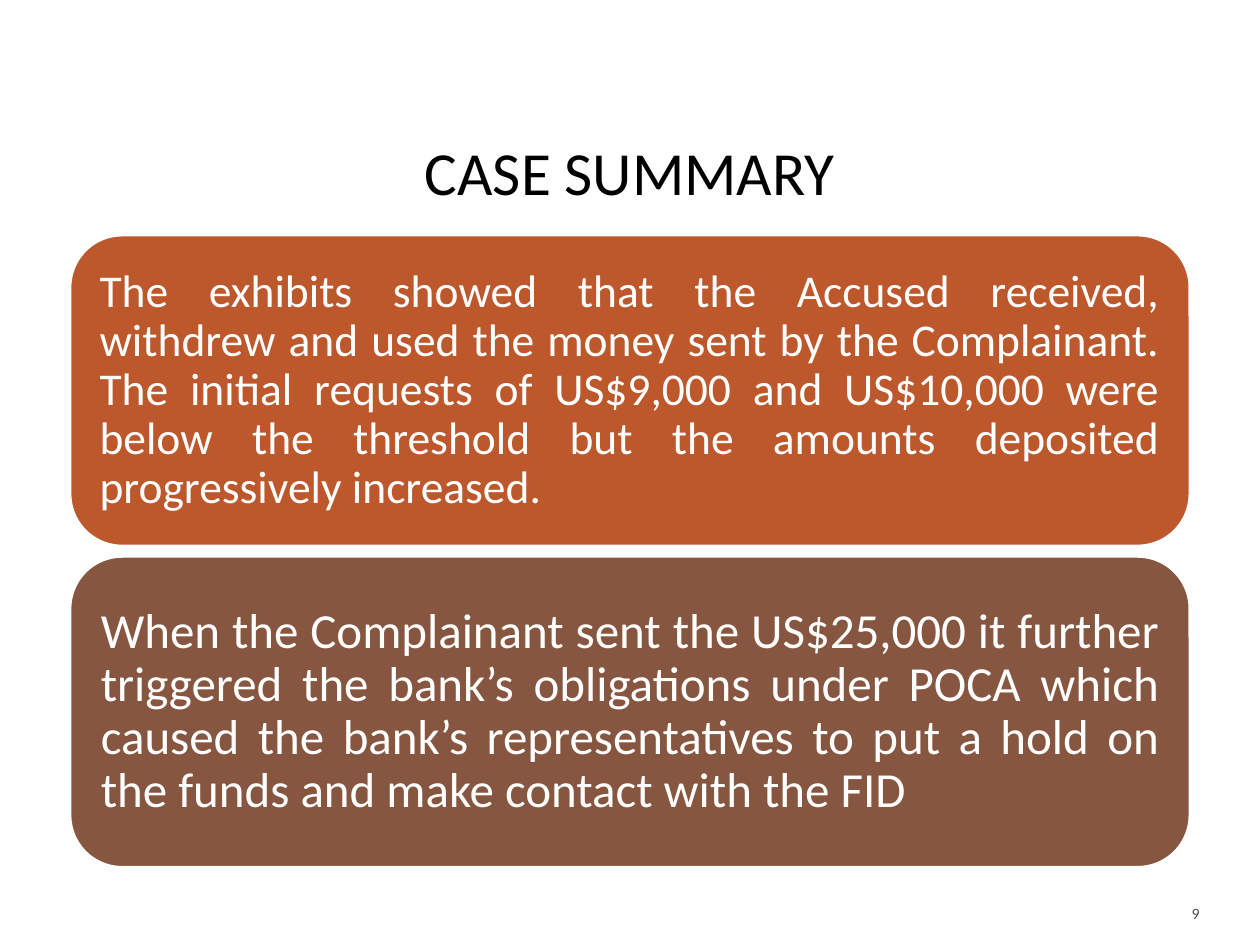
from pptx import Presentation
from pptx.dml import color
from pptx.enum import shapes, text
from pptx.util import Inches, Pt

ALIGN = text.PP_ALIGN
ANCHOR = text.MSO_ANCHOR
PANEL_LEFT, PANEL_TOP = 0.56, 1.87
PANEL_WIDTH, PANEL_HEIGHT, PANEL_STEP = 8.88, 2.46, 2.55
PANELS = [
    ("The exhibits showed that the Accused received, withdrew and used the money "
     "sent by the Complainant.\vThe initial requests of US$9,000 and US$10,000 were "
     "below the threshold but the amounts deposited progressively increased.",
     "BD582C", 26, 0.11),
    ("When the Complainant sent the US$25,000 it further triggered the bank’s "
     "obligations under POCA which caused the bank’s representatives to put a hold "
     "on the funds and make contact with the FID",
     "865640", 28, 0.12),
]


def rgb(value):
    return color.RGBColor.from_string(value)


def write_text(box, content, size, fill="000000", align=ALIGN.LEFT,
               anchor=ANCHOR.MIDDLE, spacing=1.0, inset=None):
    frame = box.text_frame
    frame.word_wrap = True
    frame.auto_size = text.MSO_AUTO_SIZE.NONE
    frame.vertical_anchor = anchor
    if inset is not None:
        frame.margin_left = frame.margin_right = Inches(inset)
        frame.margin_top = frame.margin_bottom = Inches(inset)
    para = frame.paragraphs[0]
    para.text = content
    para.alignment = align
    para.line_spacing = spacing
    for span in para.runs:
        span.font.name = "Calibri"
        span.font.size = Pt(size)
        span.font.color.rgb = rgb(fill)


def add_title(page, content):
    title = page.shapes.title
    title.left, title.top = Inches(0.94), Inches(1.08)
    title.width, title.height = Inches(8.12), Inches(0.75)
    write_text(title, content, 35, align=ALIGN.CENTER, anchor=ANCHOR.TOP, spacing=0.9)


def add_panel(page, top, content, fill, size, inset):
    panel = page.shapes.add_shape(
        shapes.MSO_SHAPE.ROUNDED_RECTANGLE, Inches(PANEL_LEFT), Inches(top),
        Inches(PANEL_WIDTH), Inches(PANEL_HEIGHT))
    panel.shadow.inherit = False
    panel.fill.solid()
    panel.fill.fore_color.rgb = rgb(fill)
    panel.line.color.rgb = rgb("FFFFFF")
    panel.line.width = Pt(1)
    write_text(panel, content, size, fill="FFFFFF", align=ALIGN.JUSTIFY,
               spacing=0.9, inset=inset)


def add_page_number(page, number):
    box = page.shapes.add_textbox(Inches(9.06), Inches(7), Inches(0.56), Inches(0.5))
    write_text(box, number, 9, fill="4D4D4D", align=ALIGN.RIGHT)


def main():
    deck = Presentation()
    deck.slide_width, deck.slide_height = Inches(10), Inches(7.5)
    page = deck.slides.add_slide(deck.slide_layouts[5])
    add_title(page, "CASE SUMMARY")
    add_page_number(page, "9")
    for index, panel in enumerate(PANELS):
        add_panel(page, PANEL_TOP + index * PANEL_STEP, *panel)
    deck.save("out.pptx")


if __name__ == "__main__":
    main()
